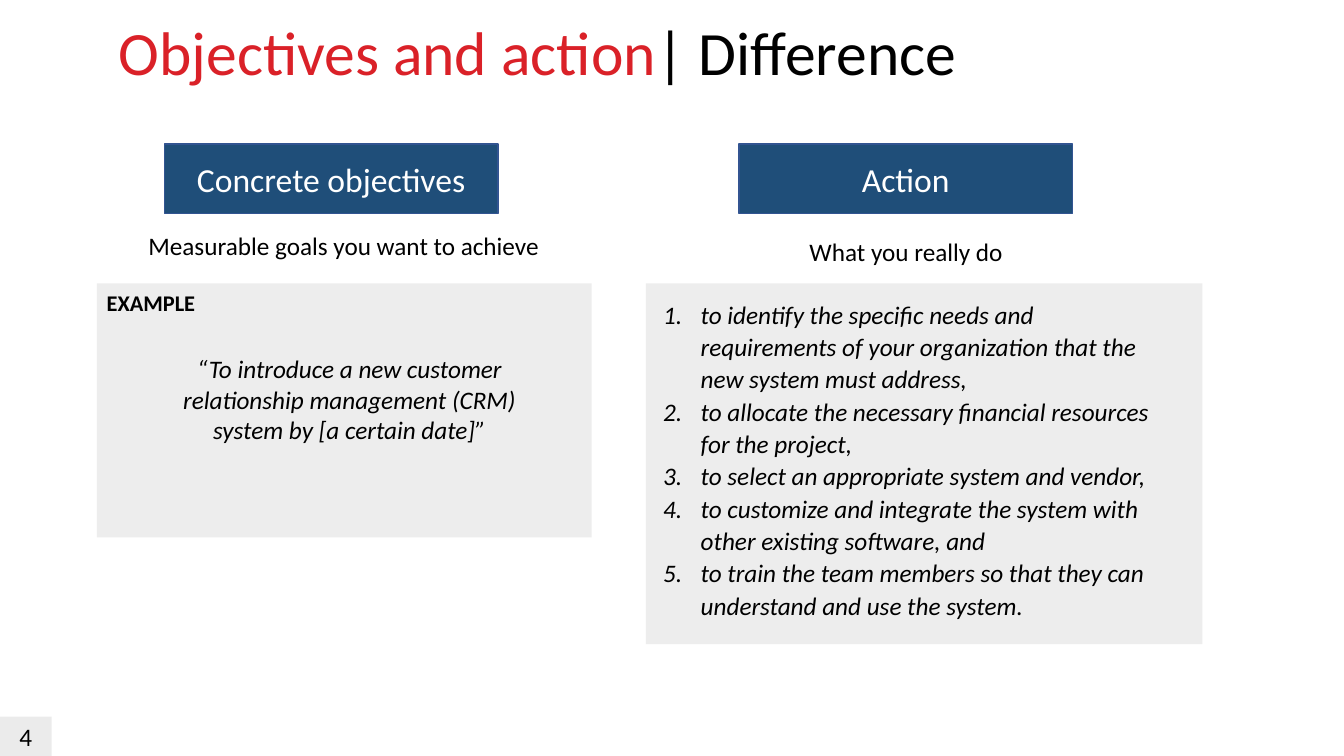
from lxml import etree
from pptx import Presentation
from pptx import util as u
from pptx.dml.color import RGBColor
from pptx.enum import shapes, text
from pptx.oxml.ns import qn

RED = RGBColor(0xDA, 0x21, 0x28)
BLACK = RGBColor(0, 0, 0)
WHITE = RGBColor(0xFF, 0xFF, 0xFF)
NAVY = RGBColor(0x1F, 0x4E, 0x79)
EDGE = RGBColor(0x32, 0x54, 0x91)
PALE = RGBColor(0xED, 0xED, 0xED)
GREY = RGBColor(0xBF, 0xBF, 0xBF)

LEFT = text.PP_ALIGN.LEFT
MID = text.PP_ALIGN.CENTER
TOP = text.MSO_ANCHOR.TOP

STEPS = [
    "to identify the specific needs and requirements of your organization "
    "that the new system must address,",
    "to allocate the necessary financial resources for the project,",
    "to select an appropriate system and vendor,",
    "to customize and integrate the system with other existing software, and",
    "to train the team members so that they can understand and use the system.",
]


def add_run(para, words, size=18, color=BLACK, bold=False, italic=False):
    run = para.add_run()
    run.text = words
    font = run.font
    font.name = "Calibri"
    font.size = u.Pt(size)
    font.color.rgb = color
    font.bold = bold
    font.italic = italic


def add_rect(parent, box, fill, edge=None):
    rect = parent.add_shape(shapes.MSO_SHAPE.RECTANGLE, *map(u.Cm, box))
    rect.shadow.inherit = False
    rect.fill.solid()
    rect.fill.fore_color.rgb = fill
    if edge is None:
        rect.line.fill.background()
    else:
        rect.line.color.rgb = edge
        rect.line.width = u.Pt(1)
    return rect


def add_text(parent, box, align=LEFT, wrap=True):
    frame = parent.add_textbox(*map(u.Cm, box)).text_frame
    frame.word_wrap = wrap
    para = frame.paragraphs[0]
    para.alignment = align
    return frame, para


def add_title(parent):
    _, para = add_text(parent, (2.74, 0.43, 29.21, 3.68))
    para.line_spacing = 0.9
    add_run(para, "Objectives and action", 44, RED)
    add_run(para, "| Difference", 44)


def add_page(parent, number):
    rect = add_rect(parent, (0, 18.06, 1.3, 1.02), GREY)
    tone = rect.fill._xPr.find(".//" + qn("a:srgbClr"))
    etree.SubElement(tone, qn("a:alpha"), val="30000")
    frame = rect.text_frame
    frame.vertical_anchor = TOP
    para = frame.paragraphs[0]
    para.alignment = MID
    add_run(para, number)


def add_head(parent, left, words):
    rect = add_rect(parent, (left, 3.63, 8.41, 1.75), NAVY, EDGE)
    para = rect.text_frame.paragraphs[0]
    para.alignment = MID
    add_run(para, words, 24, WHITE)


def add_step(frame, words):
    para = frame.add_paragraph()
    para.line_spacing = 1.07
    props = para._p.get_or_add_pPr()
    props.set("marL", str(u.Cm(0.95)))
    props.set("indent", str(u.Cm(-0.95)))
    etree.SubElement(props, qn("a:buFont"), typeface="+mj-lt")
    etree.SubElement(props, qn("a:buAutoNum"), type="arabicPeriod")
    add_run(para, words, italic=True)
    return para


def add_action(parent):
    add_rect(parent, (16.28, 7.14, 14.02, 9.09), PALE)
    frame, para = add_text(parent, (16.46, 5.82, 12.75, 9.98), MID)
    add_run(para, "What you really do")
    para.space_after = u.Pt(22)
    for step in STEPS:
        last = add_step(frame, step)
    last.space_after = u.Pt(8)


def add_goal(parent):
    add_rect(parent, (2.44, 7.14, 12.47, 6.4), PALE)
    _, para = add_text(parent, (3.43, 5.69, 10.46, 1.8), MID, False)
    add_run(para, "Measurable goals you want to achieve")
    _, para = add_text(parent, (3.45, 8.79, 10.72, 2.57), MID)
    add_run(para, "“To introduce a new customer relationship management (CRM) "
                  "system by [a certain date]”", italic=True)
    _, para = add_text(parent, (2.44, 7.16, 2.77, 0.94), wrap=False)
    add_run(para, "EXAMPLE", 16, bold=True)


def main():
    deck = Presentation()
    deck.slide_width = u.Cm(33.87)
    deck.slide_height = u.Cm(19.05)
    tree = deck.slides.add_slide(deck.slide_layouts[6]).shapes
    add_title(tree)
    add_page(tree, "4")
    add_head(tree, 4.14, "Concrete objectives")
    add_head(tree, 18.62, "Action")
    add_action(tree.add_group_shape().shapes)
    add_goal(tree.add_group_shape().shapes)
    deck.save("out.pptx")


if __name__ == "__main__":
    main()
